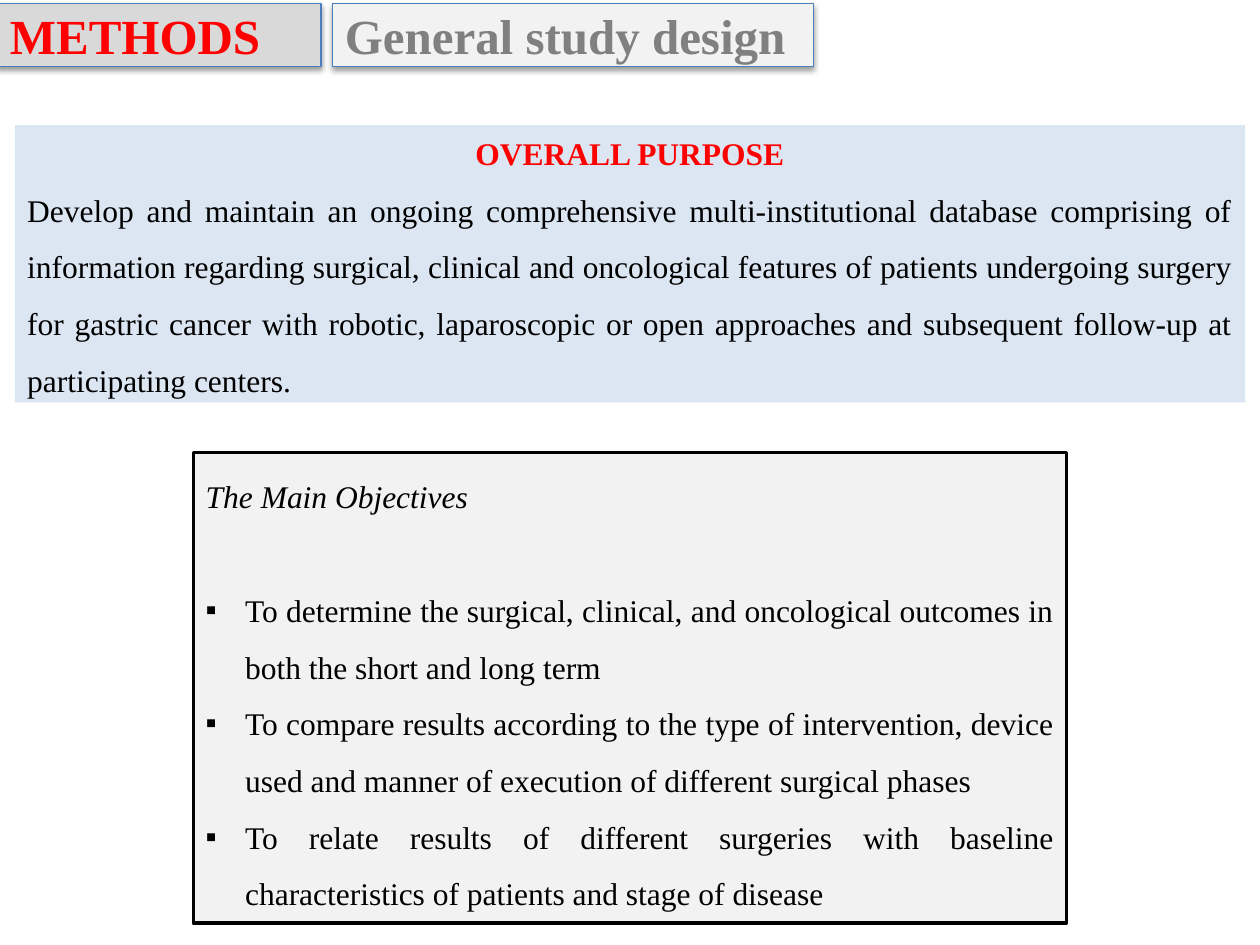
from lxml import etree
from pptx import Presentation
from pptx.dml.color import RGBColor
from pptx.enum.shapes import MSO_SHAPE
from pptx.enum.text import MSO_ANCHOR, PP_ALIGN
from pptx.oxml.ns import qn
from pptx.util import Pt

RECTANGLE = MSO_SHAPE.RECTANGLE
TOP, MIDDLE = MSO_ANCHOR.TOP, MSO_ANCHOR.MIDDLE
LEFT, CENTER, JUSTIFY = PP_ALIGN.LEFT, PP_ALIGN.CENTER, PP_ALIGN.JUSTIFY
FONT = "Times New Roman"
TITLE_ONLY = 5
COLORS = {
    "red": "FF0000",
    "black": "000000",
    "gray": "808080",
    "blue_line": "4B7EBC",
    "title_fill": "D9D9D9",
    "light_fill": "F2F2F2",
    "purpose_fill": "DCE6F2",
}
PURPOSE = (
    "Develop and maintain an ongoing comprehensive multi-institutional database "
    "comprising of information regarding surgical, clinical and oncological features "
    "of patients undergoing surgery for gastric cancer with robotic, laparoscopic or "
    "open approaches and subsequent follow-up at participating centers."
)
OBJECTIVES = [
    "To determine the surgical, clinical, and oncological outcomes in both the short "
    "and long term",
    "To compare results according to the type of intervention, device used and manner "
    "of execution of different surgical phases",
    "To relate results of different surgeries with baseline characteristics of "
    "patients and stage of disease",
]


def color(name):
    """Return the named colour."""
    return RGBColor.from_string(COLORS[name])


def format_box(shape, bounds, fill, line=None, width=0.75, anchor=MIDDLE, bottom=3.6):
    """Place a box and set its fill, outline and text frame."""
    shape.left, shape.top, shape.width, shape.height = map(Pt, bounds)
    shape.fill.solid()
    shape.fill.fore_color.rgb = color(fill)
    if line:
        shape.line.color.rgb = color(line)
        shape.line.width = Pt(width)
    else:
        shape.line.fill.background()
    frame = shape.text_frame
    frame.word_wrap = True
    frame.vertical_anchor = anchor
    frame.margin_left = frame.margin_right = Pt(7.2)
    frame.margin_top, frame.margin_bottom = Pt(3.6), Pt(bottom)


def add_box(slide, bounds, fill, **options):
    """Add a rectangle without a shadow."""
    shape = slide.shapes.add_shape(RECTANGLE, *map(Pt, bounds))
    shape.shadow.inherit = False
    format_box(shape, bounds, fill, **options)
    return shape


def add_shadow(shape):
    """Give a shape a soft shadow below it."""
    properties = shape._element.spPr
    for effects in properties.findall(qn("a:effectLst")):
        properties.remove(effects)
    effects = etree.SubElement(properties, qn("a:effectLst"))
    shadow = etree.SubElement(
        effects, qn("a:outerShdw"), blurRad=str(Pt(3.1)), dist=str(Pt(1.6)),
        dir="5400000", rotWithShape="0")
    shade = etree.SubElement(shadow, qn("a:srgbClr"), val=COLORS["black"])
    etree.SubElement(shade, qn("a:alpha"), val="38000")


def add_bullet(paragraph, indent=22.5):
    """Give a paragraph a square bullet with a hanging indent."""
    properties = paragraph._p.get_or_add_pPr()
    properties.set("marL", str(Pt(indent)))
    properties.set("indent", str(-Pt(indent)))
    etree.SubElement(properties, qn("a:buFont"), typeface=FONT)
    etree.SubElement(properties, qn("a:buChar"), char="▪")


def add_text(shape, text, size=18, ink="black", bold=False, italic=False,
             align=JUSTIFY, spacing=1.5, after=0, bullet=False):
    """Write one formatted paragraph into a shape."""
    frame = shape.text_frame
    paragraph = frame.add_paragraph() if frame.text else frame.paragraphs[0]
    paragraph.alignment = align
    paragraph.line_spacing = spacing
    paragraph.space_before, paragraph.space_after = Pt(0), Pt(after)
    if bullet:
        add_bullet(paragraph)
    run = paragraph.add_run()
    run.text = text
    font = run.font
    font.name, font.size = FONT, Pt(size)
    font.bold, font.italic = bold, italic
    font.color.rgb = color(ink)


def add_headings(slide):
    """Format the title and add the subtitle box beside it."""
    heading = dict(size=28, bold=True, spacing=1)
    title = slide.shapes.title
    format_box(title, (-1.5, 2, 185, 36), "title_fill", line="blue_line")
    add_text(title, "METHODS", ink="red", align=LEFT, **heading)
    subtitle = add_box(slide, (190, 2, 275, 36), "light_fill", line="blue_line")
    add_text(subtitle, "General study design", ink="gray", **heading)
    for shape in (title, subtitle):
        add_shadow(shape)


def add_purpose(slide):
    """Add the overall purpose panel."""
    panel = add_box(slide, (8.5, 71.5, 703, 158.5), "purpose_fill", bottom=11.6)
    add_text(panel, "OVERALL PURPOSE", ink="red", bold=True, align=CENTER)
    add_text(panel, PURPOSE)


def add_objectives(slide):
    """Add the framed list of objectives."""
    panel = add_box(slide, (110.5, 258.5, 499, 269), "light_fill",
                    line="black", width=2, anchor=TOP)
    add_text(panel, "The Main Objectives", italic=True, after=32.4)
    for objective in OBJECTIVES:
        add_text(panel, objective, bullet=True)


def main():
    """Build and save the slide."""
    presentation = Presentation()
    presentation.slide_width, presentation.slide_height = Pt(720), Pt(540)
    slide = presentation.slides.add_slide(presentation.slide_layouts[TITLE_ONLY])
    add_headings(slide)
    add_purpose(slide)
    add_objectives(slide)
    presentation.save("out.pptx")


if __name__ == "__main__":
    main()
